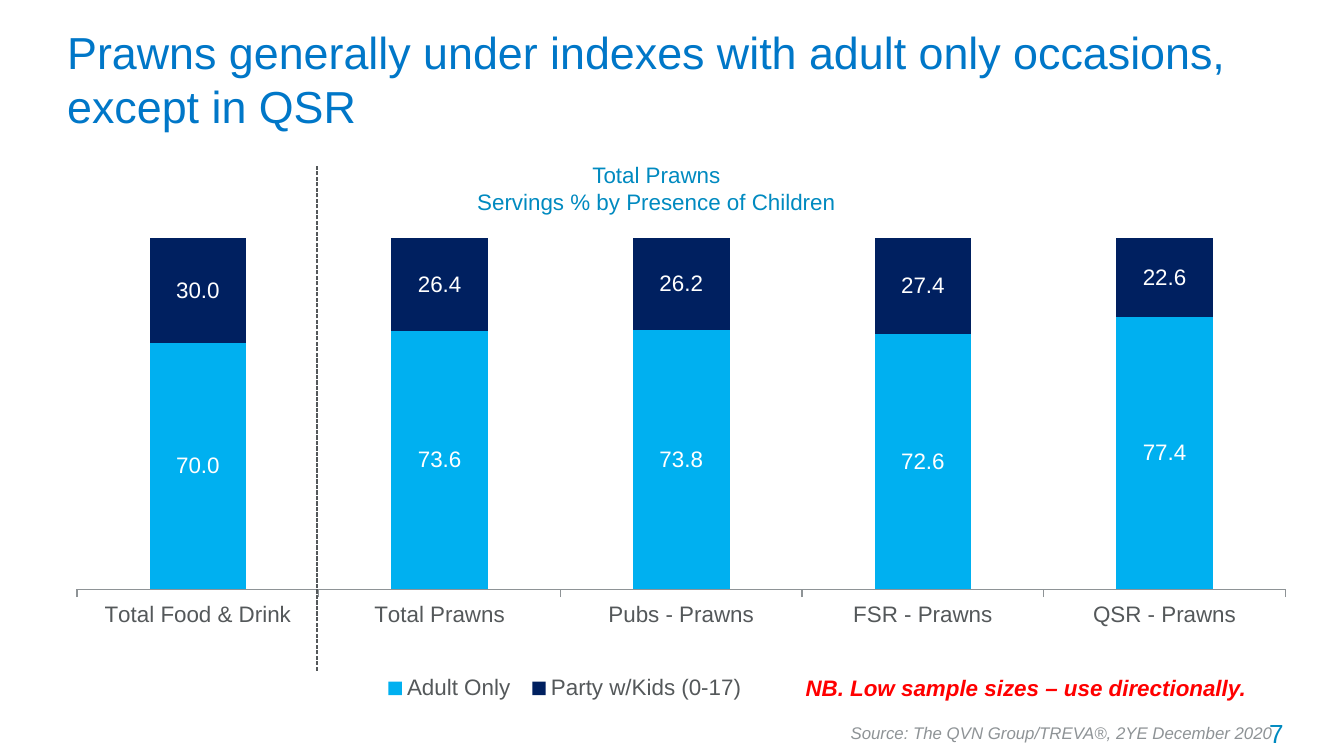
import pptx
import pptx.chart.data
import pptx.dml.color
import pptx.enum.chart
import pptx.enum.dml
import pptx.enum.shapes
import pptx.enum.text
import pptx.oxml
import pptx.oxml.ns
import pptx.util
from pptx.util import Pt

RGBColor = pptx.dml.color.RGBColor
Align = pptx.enum.text.PP_ALIGN
Anchor = pptx.enum.text.MSO_ANCHOR

# Colours and font
TITLE_BLUE = RGBColor(0x00, 0x77, 0xC8)
TEXT_BLUE = RGBColor(0x00, 0x8A, 0xC0)
SKY = RGBColor(0x00, 0xB0, 0xF0)
NAVY = RGBColor(0x00, 0x20, 0x60)
DARK_GREY = RGBColor(0x54, 0x58, 0x5A)
GREY = RGBColor(0x8E, 0x93, 0x96)
RED = RGBColor(0xFF, 0x00, 0x00)
WHITE = RGBColor(0xFF, 0xFF, 0xFF)
FONT = "Arial"

# Content
TITLE = "Prawns generally under indexes with adult only occasions, except in QSR"
CATEGORIES = ["Total Food & Drink", "Total Prawns", "Pubs - Prawns",
              "FSR - Prawns", "QSR - Prawns"]
SERIES = [
    ("Adult Only", (70.0, 73.6, 73.8, 72.6, 77.4), SKY),
    ("Party w/Kids (0-17)", (30.0, 26.4, 26.2, 27.4, 22.6), NAVY),
]
# lines, box (left, top, width, height), size, colour, alignment, bold, italic, wrap
HEADING = (["Total Prawns", "Servings % by Presence of Children"],
           (247.7, 82.8, 208, 36), 12, TEXT_BLUE, Align.CENTER, False, False, False)
PAGE_NUMBER = (["7"], (637.2, 380.9, 57.6, 24.5), 14, TEXT_BLUE,
               Align.RIGHT, False, False, True)
SAMPLE_NOTE = (["NB. Low sample sizes – use directionally."],
               (410.4, 357.8, 278.6, 21.6), 12, RED, Align.CENTER, True, True, True)
SOURCE = (["Source: The QVN Group/TREVA®, 2YE December 2020"],
          (448.6, 383.8, 242.6, 18), 9, GREY, Align.LEFT, False, True, False)

# Places, in points
TITLE_BOX = (28.8, 16.6, 660.2, 51.1)
CHART_BOX = (28.8, 96.5, 660.2, 282.2)
DIVIDER = (169.9, 359.3, 169.9, 88.6)
PLOT_LAYOUT = (0.019, 0.11, 0.981, 0.667)
LEGEND_LAYOUT = (0.26, 0.93, 0.31, 0.07)


def points(values):
    return [Pt(value) for value in values]


def style_font(font, size, color, bold=False, italic=False):
    font.name, font.size = FONT, Pt(size)
    font.bold, font.italic = bold, italic
    font.color.rgb = color


def add_text(slide, lines, box, size, color, alignment, bold, italic, wrap):
    frame = slide.shapes.add_textbox(*points(box)).text_frame
    frame.word_wrap = wrap
    for index, line in enumerate(lines):
        paragraph = frame.add_paragraph() if index else frame.paragraphs[0]
        paragraph.alignment = alignment
        run = paragraph.add_run()
        run.text = line
        style_font(run.font, size, color, bold, italic)


def manual_layout(fractions, inner=False):
    target = '<c:layoutTarget val="inner"/>' if inner else ""
    modes = "".join(f'<c:{key}Mode val="edge"/>' for key in "xy")
    sizes = "".join(f'<c:{key} val="{value}"/>' for key, value in zip("xywh", fractions))
    return pptx.oxml.parse_xml(
        f'<c:layout {pptx.oxml.ns.nsdecls("c")}><c:manualLayout>'
        f"{target}{modes}{sizes}</c:manualLayout></c:layout>")


def set_layout(element, layout, position):
    for old in element.findall(pptx.oxml.ns.qn("c:layout")):
        element.remove(old)
    element.insert(position, layout)


def add_servings_chart(slide):
    data = pptx.chart.data.CategoryChartData(number_format="#,##0.0")
    data.categories = CATEGORIES
    for name, values, _ in SERIES:
        data.add_series(name, values)
    chart = slide.shapes.add_chart(
        pptx.enum.chart.XL_CHART_TYPE.COLUMN_STACKED_100,
        *points(CHART_BOX), data).chart
    style_font(chart.font, 12, DARK_GREY)
    chart.has_title = False

    plot = chart.plots[0]
    plot.gap_width, plot.overlap = 150, 100
    plot.vary_by_categories = False
    for series, (_, _, color) in zip(plot.series, SERIES):
        series.format.fill.solid()
        series.format.fill.fore_color.rgb = color
        labels = series.data_labels
        labels.show_value = True
        labels.number_format = "#,##0.0"
        labels.number_format_is_linked = False
        style_font(labels.font, 12, WHITE)

    # Axes
    chart.value_axis.visible = False
    chart.value_axis.has_major_gridlines = False
    chart.value_axis.minimum_scale, chart.value_axis.maximum_scale = 0, 1
    chart.category_axis.major_tick_mark = pptx.enum.chart.XL_TICK_MARK.OUTSIDE
    chart.category_axis.format.line.color.rgb = GREY
    chart.category_axis.format.line.width = Pt(0.75)

    # Legend and plot area
    chart.has_legend = True
    chart.legend.position = pptx.enum.chart.XL_LEGEND_POSITION.BOTTOM
    chart.legend.include_in_layout = False
    style_font(chart.legend.font, 12, DARK_GREY)
    set_layout(chart.legend._element, manual_layout(LEGEND_LAYOUT), 1)
    plot_area = chart._chartSpace.chart.plotArea
    set_layout(plot_area, manual_layout(PLOT_LAYOUT, inner=True), 0)


def add_divider(slide):
    divider = slide.shapes.add_connector(
        pptx.enum.shapes.MSO_CONNECTOR.STRAIGHT, *points(DIVIDER))
    divider.line.color.rgb = DARK_GREY
    divider.line.width = Pt(0.75)
    divider.line.dash_style = pptx.enum.dml.MSO_LINE.SQUARE_DOT
    divider._element.spPr.append(pptx.oxml.parse_xml(
        f'<a:effectLst {pptx.oxml.ns.nsdecls("a")}/>'))


def add_title(slide):
    title = slide.shapes.title
    title.left, title.top, title.width, title.height = points(TITLE_BOX)
    frame = title.text_frame
    frame.word_wrap = True
    frame.auto_size = pptx.enum.text.MSO_AUTO_SIZE.NONE
    frame.vertical_anchor = Anchor.MIDDLE
    paragraph = frame.paragraphs[0]
    paragraph.alignment = Align.LEFT
    run = paragraph.add_run()
    run.text = TITLE
    style_font(run.font, 24, TITLE_BLUE)


def main():
    presentation = pptx.Presentation()
    presentation.slide_width, presentation.slide_height = Pt(720), Pt(405)
    slide = presentation.slides.add_slide(presentation.slide_layouts[5])
    add_title(slide)
    add_servings_chart(slide)
    add_divider(slide)
    for text in (HEADING, PAGE_NUMBER, SAMPLE_NOTE, SOURCE):
        add_text(slide, *text)
    presentation.save("out.pptx")


if __name__ == "__main__":
    main()
